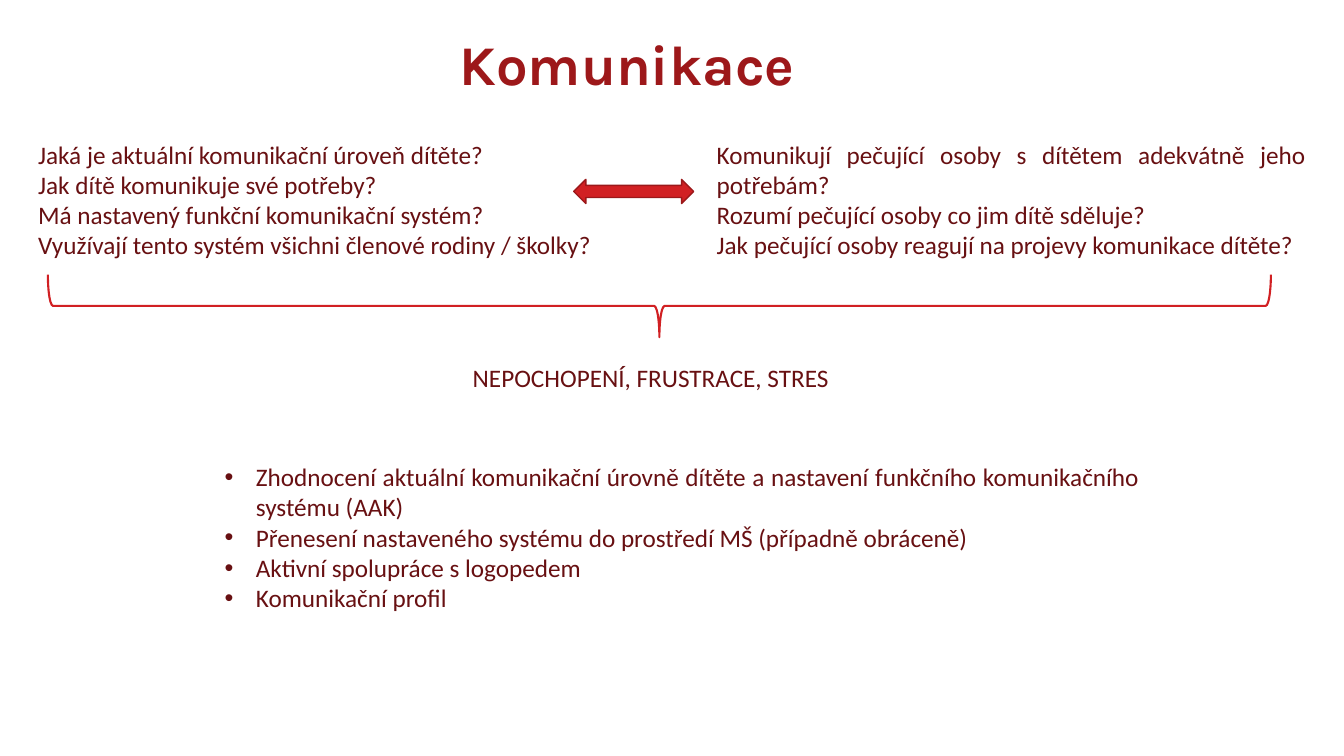
from dataclasses import dataclass

from lxml import etree
from pptx import Presentation
from pptx import util as u
from pptx.dml.color import RGBColor
from pptx.enum import shapes, text
from pptx.oxml.ns import qn


@dataclass(frozen=True)
class Theme:
    title: RGBColor = RGBColor.from_string("9D181A")
    body: RGBColor = RGBColor.from_string("681012")
    accent: RGBColor = RGBColor.from_string("D12023")
    edge: RGBColor = RGBColor.from_string("9B181A")
    head_font: str = "Karla"
    body_font: str = "Calibri"
    head_size: int = 40
    body_size: int = 18


@dataclass(frozen=True)
class Box:
    left: float
    top: float
    width: float
    height: float

    def place(self) -> tuple:
        return tuple(map(u.Inches, (self.left, self.top, self.width, self.height)))


@dataclass(frozen=True)
class Block:
    box: Box
    lines: tuple[str, ...]
    align: text.PP_ALIGN = text.PP_ALIGN.JUSTIFY
    bullet: bool = False
    head: bool = False


@dataclass(frozen=True)
class Mark:
    box: Box
    kind: shapes.MSO_SHAPE
    line: RGBColor
    weight: float
    fill: RGBColor | None = None
    turn: int = 0


THEME = Theme()

BLOCKS = (
    # Title
    Block(Box(0.54, 0.29, 11.5, 0.73), ("Komunikace ",), text.PP_ALIGN.CENTER, head=True),
    # Questions about the child
    Block(Box(0.28, 1.33, 6.04, 2.22), (
        "Jaká je aktuální komunikační úroveň dítěte?",
        "Jak dítě komunikuje své potřeby?",
        "Má nastavený funkční komunikační systém?",
        "Využívají tento systém všichni členové rodiny / školky?",
    )),
    # Questions about the carers
    Block(Box(7.01, 1.33, 6.04, 2.22), (
        "Komunikují pečující osoby s dítětem adekvátně jeho potřebám?",
        "Rozumí pečující osoby co jim dítě sděluje?",
        "Jak pečující osoby reagují na projevy komunikace dítěte?",
    )),
    # Outcome
    Block(Box(4.59, 3.55, 3.89, 0.4), ("NEPOCHOPENÍ, FRUSTRACE, STRES",), text.PP_ALIGN.LEFT),
    # Steps
    Block(Box(2.13, 4.53, 9.27, 2.83), (
        "Zhodnocení aktuální komunikační úrovně dítěte a nastavení funkčního "
        "komunikačního systému (AAK)",
        "Přenesení nastaveného systému do prostředí MŠ (případně obráceně)",
        "Aktivní spolupráce s logopedem",
        "Komunikační profil",
    ), bullet=True),
)

MARKS = (
    Mark(Box(5.69, 1.78, 1.19, 0.24), shapes.MSO_SHAPE.LEFT_RIGHT_ARROW,
         THEME.edge, 1, THEME.accent),
    Mark(Box(6.23, -3.03, 0.62, 12.13), shapes.MSO_SHAPE.LEFT_BRACE,
         THEME.accent, 1.5, turn=270),
)


def add_dot(para) -> None:
    props = para._p.get_or_add_pPr()
    props.set("marL", str(u.Inches(0.31)))
    props.set("indent", str(-u.Inches(0.31)))
    etree.SubElement(props, qn("a:buFont")).set("typeface", "Arial")
    etree.SubElement(props, qn("a:buChar")).set("char", "•")


def draw_block(slide, block: Block) -> None:
    frame = slide.shapes.add_textbox(*block.box.place()).text_frame
    frame.word_wrap = True
    if block.head:
        frame.vertical_anchor = text.MSO_ANCHOR.BOTTOM
    frame.text = "\n".join(block.lines)
    for para in frame.paragraphs:
        para.alignment = block.align
        if block.head:
            para.line_spacing = 0.9
        if block.bullet:
            add_dot(para)
        font = para.runs[0].font
        font.name = THEME.head_font if block.head else THEME.body_font
        font.size = u.Pt(THEME.head_size if block.head else THEME.body_size)
        font.bold = block.head
        font.color.rgb = THEME.title if block.head else THEME.body


def draw_mark(slide, mark: Mark) -> None:
    shape = slide.shapes.add_shape(mark.kind, *mark.box.place())
    shape.shadow.inherit = False
    shape.rotation = mark.turn
    if mark.fill is None:
        shape.fill.background()
    else:
        shape.fill.solid()
        shape.fill.fore_color.rgb = mark.fill
    shape.line.color.rgb = mark.line
    shape.line.width = u.Pt(mark.weight)


def main() -> None:
    deck = Presentation()
    deck.slide_width, deck.slide_height = u.Inches(13.33), u.Inches(7.5)
    slide = deck.slides.add_slide(deck.slide_layouts[6])
    for block in BLOCKS:
        draw_block(slide, block)
    for mark in MARKS:
        draw_mark(slide, mark)
    deck.save("out.pptx")


if __name__ == "__main__":
    main()
